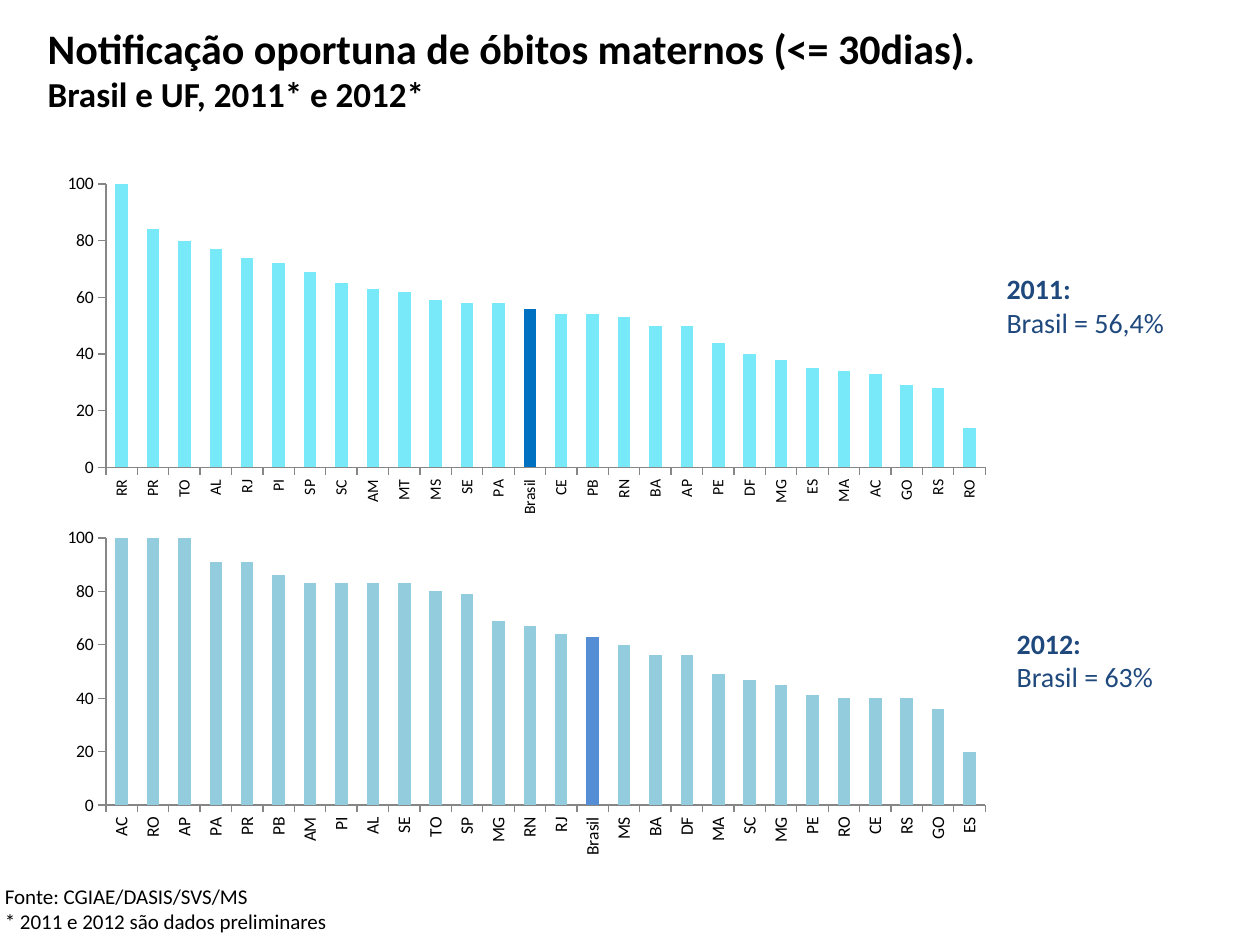
from dataclasses import dataclass

from pptx import Presentation
from pptx.chart.data import CategoryChartData
from pptx.dml.color import RGBColor
from pptx.enum.chart import XL_CHART_TYPE, XL_TICK_LABEL_POSITION, XL_TICK_MARK
from pptx.enum.text import MSO_ANCHOR
from pptx.oxml import parse_xml
from pptx.oxml.ns import nsdecls
from pptx.util import Inches, Pt

COLUMNS = XL_CHART_TYPE.COLUMN_CLUSTERED
TICK_OUT = XL_TICK_MARK.OUTSIDE
TICK_NONE = XL_TICK_MARK.NONE
LABELS_LOW = XL_TICK_LABEL_POSITION.LOW
TOP = MSO_ANCHOR.TOP


@dataclass(frozen=True)
class Theme:
    font: str = "Calibri"
    text: str = "000000"
    note: str = "1F497D"
    axis: str = "868686"
    title_size: int = 24
    subtitle_size: int = 20
    note_size: int = 16
    source_size: int = 12
    axis_size: int = 10


THEME = Theme()

STATES_2011 = ("RR PR TO AL RJ PI SP SC AM MT MS SE PA Brasil CE PB RN BA AP PE "
               "DF MG ES MA AC GO RS RO").split()
VALUES_2011 = [100, 84, 80, 77, 74, 72, 69, 65, 63, 62, 59, 58, 58, 56,
               54, 54, 53, 50, 50, 44, 40, 38, 35, 34, 33, 29, 28, 14]
STATES_2012 = ("AC RO AP PA PR PB AM PI AL SE TO SP MG RN RJ Brasil MS BA DF MA "
               "SC MG PE RO CE RS GO ES").split()
VALUES_2012 = [100, 100, 100, 91, 91, 86, 83, 83, 83, 83, 80, 79, 69, 67,
               64, 63, 60, 56, 56, 49, 47, 45, 41, 40, 40, 40, 36, 20]


def add_run(paragraph, text, size, color, bold=False):
    run = paragraph.add_run()
    run.text = text
    run.font.name = THEME.font
    run.font.size = Pt(size)
    run.font.bold = bold
    run.font.color.rgb = RGBColor.from_string(color)


def add_text_frame(slide, box):
    frame = slide.shapes.add_textbox(*map(Inches, box)).text_frame
    frame.word_wrap = True
    frame.vertical_anchor = TOP
    return frame


def add_title(slide, box, title, subtitle):
    paragraph = add_text_frame(slide, box).paragraphs[0]
    add_run(paragraph, title, THEME.title_size, THEME.text, bold=True)
    paragraph.add_line_break()
    add_run(paragraph, subtitle, THEME.subtitle_size, THEME.text, bold=True)


def add_lines(slide, box, lines, size, color, bold_first=False):
    frame = add_text_frame(slide, box)
    for index, line in enumerate(lines):
        paragraph = frame.add_paragraph() if index else frame.paragraphs[0]
        add_run(paragraph, line, size, color, bold=bold_first and index == 0)


def set_plot_area(chart, box, plot_box):
    """Fix the inner plot area, given in slide inches, inside the chart box."""
    left, top, width, height = box
    plot_left, plot_top, plot_width, plot_height = plot_box
    fractions = {"x": (plot_left - left) / width, "y": (plot_top - top) / height,
                 "w": plot_width / width, "h": plot_height / height}
    parts = "".join(f'<c:{key} val="{value:.4f}"/>' for key, value in fractions.items())
    layout = parse_xml(
        f'<c:layout {nsdecls("c")}><c:manualLayout><c:layoutTarget val="inner"/>'
        f'<c:xMode val="edge"/><c:yMode val="edge"/>{parts}</c:manualLayout></c:layout>')
    plot_area = chart._chartSpace.chart.plotArea
    for old_layout in plot_area.findall(layout.tag):
        plot_area.remove(old_layout)
    plot_area.insert(0, layout)


def add_state_chart(slide, box, plot_box, states, values, color, highlight, label_size):
    data = CategoryChartData(number_format="0")
    data.categories = states
    data.add_series("Notificação oportuna (%)", values)
    chart = slide.shapes.add_chart(COLUMNS, *map(Inches, box), data).chart
    chart.has_legend = False
    chart.has_title = False
    chart.font.name = THEME.font
    chart.font.size = Pt(THEME.axis_size)
    chart.font.color.rgb = RGBColor.from_string(THEME.text)
    set_plot_area(chart, box, plot_box)

    # Columns, with the national figure picked out
    plot = chart.plots[0]
    plot.gap_width = 150
    plot.vary_by_categories = False
    series = plot.series[0]
    brazil = series.points[states.index("Brasil")]
    for part, fill_color in ((series, color), (brazil, highlight)):
        part.format.fill.solid()
        part.format.fill.fore_color.rgb = RGBColor.from_string(fill_color)

    # Axes
    for axis in (chart.category_axis, chart.value_axis):
        axis.has_major_gridlines = False
        axis.major_tick_mark = TICK_OUT
        axis.minor_tick_mark = TICK_NONE
        axis.format.line.color.rgb = RGBColor.from_string(THEME.axis)
        axis.format.line.width = Pt(0.75)
    category_axis = chart.category_axis
    category_axis.tick_label_position = LABELS_LOW
    category_axis.tick_labels.font.size = Pt(label_size)
    category_axis.tick_labels.font.name = THEME.font
    category_axis._element.txPr.bodyPr.set("rot", "-5400000")
    value_axis = chart.value_axis
    value_axis.minimum_scale = 0
    value_axis.maximum_scale = 100
    value_axis.major_unit = 20
    value_axis.tick_labels.number_format = "0"
    value_axis.tick_labels.number_format_is_linked = False


def main():
    presentation = Presentation()
    presentation.slide_width = Inches(10)
    presentation.slide_height = Inches(7.5)
    slide = presentation.slides.add_slide(presentation.slide_layouts[6])

    add_title(slide, (0.28, 0.13, 9.42, 0.69),
              "Notificação oportuna de óbitos maternos (<= 30dias).",
              "Brasil e UF, 2011* e 2012*")

    # One chart and one note for each year
    add_state_chart(slide, (0.39, 1.33, 7.58, 2.81), (0.84, 1.46, 6.98, 2.25),
                    STATES_2011, VALUES_2011, "78E9F8", "0070C0", label_size=9)
    add_state_chart(slide, (0.39, 4.14, 7.58, 2.73), (0.84, 4.27, 6.98, 2.12),
                    STATES_2012, VALUES_2012, "93CDDD", "558ED5", label_size=10)
    add_lines(slide, (7.89, 2.11, 1.8, 0.7), ("2011:", "Brasil = 56,4%"),
              THEME.note_size, THEME.note, bold_first=True)
    add_lines(slide, (7.97, 4.92, 1.75, 0.91), ("2012:", "Brasil = 63%"),
              THEME.note_size, THEME.note, bold_first=True)

    # Source
    add_lines(slide, (-0.06, 6.96, 5, 0.51),
              ("Fonte: CGIAE/DASIS/SVS/MS", "* 2011 e 2012 são dados preliminares"),
              THEME.source_size, THEME.text)

    presentation.save("out.pptx")


if __name__ == "__main__":
    main()
